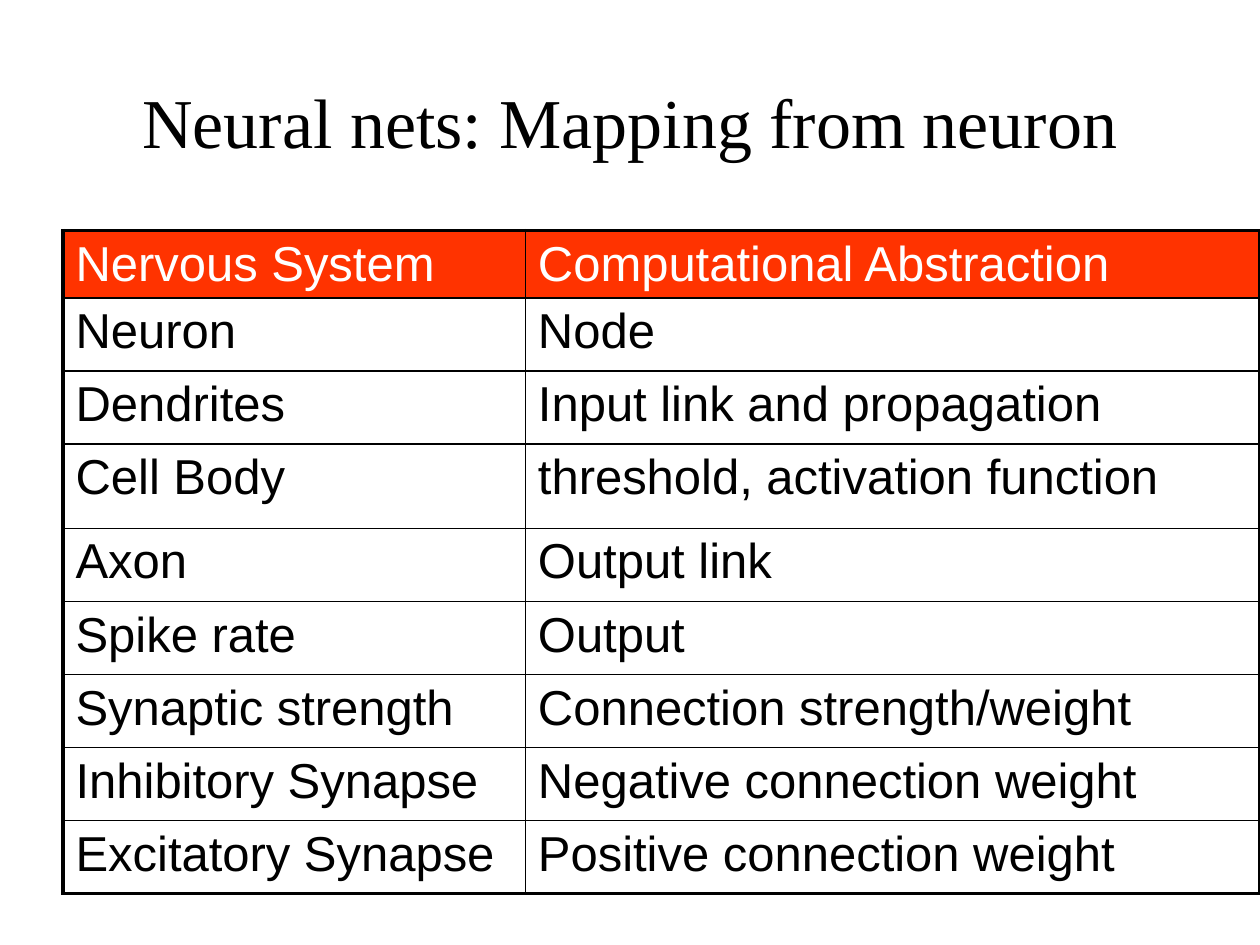
"""Builds a slide that maps parts of the nervous system to neural net concepts."""
from lxml import etree
from pptx import Presentation
from pptx.dml.color import RGBColor
from pptx.enum.text import MSO_ANCHOR, PP_ALIGN
from pptx.oxml.ns import qn
from pptx.util import Inches, Pt

LEFT, CENTER = PP_ALIGN.LEFT, PP_ALIGN.CENTER
TOP = MSO_ANCHOR.TOP

TITLE = "Neural nets: Mapping from neuron"
MAPPING = [
    ("Nervous System", "Computational Abstraction"),
    ("Neuron", "Node"),
    ("Dendrites", "Input link and propagation"),
    ("Cell Body", "threshold, activation function"),
    ("Axon", "Output link"),
    ("Spike rate", "Output"),
    ("Synaptic strength", "Connection strength/weight"),
    ("Inhibitory Synapse", "Negative connection weight"),
    ("Excitatory Synapse", "Positive connection weight"),
]
COLORS = {"text": "000000", "header_text": "FFFFFF", "header": "FF3300", "border": "000000"}
COLUMN_WIDTHS = [3.67, 5.83]
HEADER_HEIGHT, ROW_HEIGHT, CELL_BODY_HEIGHT = 0.4, 0.58, 0.67
OUTER_BORDER, INNER_BORDER = 2.25, 1


def write_text(frame, text, font="Arial", size=28, color="text", align=LEFT):
    frame.word_wrap = True
    paragraph = frame.paragraphs[0]
    paragraph.alignment = align
    run = paragraph.add_run()
    run.text = text
    run.font.name = font
    run.font.size = Pt(size)
    run.font.bold = False
    run.font.color.rgb = RGBColor.from_string(COLORS[color])


def set_borders(cell, outer_sides):
    properties = cell._tc.get_or_add_tcPr()
    for position, side in enumerate(("L", "R", "T", "B")):
        width = OUTER_BORDER if side in outer_sides else INNER_BORDER
        line = etree.Element(qn(f"a:ln{side}"), w=str(Pt(width)))
        fill = etree.SubElement(line, qn("a:solidFill"))
        etree.SubElement(fill, qn("a:srgbClr"), val=COLORS["border"])
        properties.insert(position, line)


def add_title(slide):
    title = slide.shapes.title
    title.left, title.top = Inches(0.5), Inches(0.5)
    title.width, title.height = Inches(9), Inches(1.5)
    title.text_frame.vertical_anchor = TOP
    title.text_frame.margin_top = Inches(0.12)
    write_text(title.text_frame, TITLE, font="Times New Roman", size=40, align=CENTER)


def add_mapping(slide):
    heights = [HEADER_HEIGHT] + [
        CELL_BODY_HEIGHT if part == "Cell Body" else ROW_HEIGHT for part, _ in MAPPING[1:]
    ]
    table = slide.shapes.add_table(
        len(MAPPING), len(COLUMN_WIDTHS), Inches(0.5), Inches(1.83),
        Inches(sum(COLUMN_WIDTHS)), Inches(sum(heights)),
    ).table
    table.first_row = table.horz_banding = False
    for column, width in zip(table.columns, COLUMN_WIDTHS):
        column.width = Inches(width)
    for row, height in zip(table.rows, heights):
        row.height = Inches(height)

    last_row = len(MAPPING) - 1
    for row, pair in enumerate(MAPPING):
        for column, text in enumerate(pair):
            cell = table.cell(row, column)
            is_header = row == 0
            write_text(cell.text_frame, text, color="header_text" if is_header else "text")
            if is_header:
                cell.fill.solid()
                cell.fill.fore_color.rgb = RGBColor.from_string(COLORS["header"])
            else:
                cell.fill.background()
            outer_sides = "LR"[column] + {0: "T", last_row: "B"}.get(row, "")
            set_borders(cell, outer_sides)


def main():
    presentation = Presentation()
    presentation.slide_width, presentation.slide_height = Inches(10), Inches(7.5)
    slide = presentation.slides.add_slide(presentation.slide_layouts[5])
    add_title(slide)
    add_mapping(slide)
    presentation.save("out.pptx")


if __name__ == "__main__":
    main()
